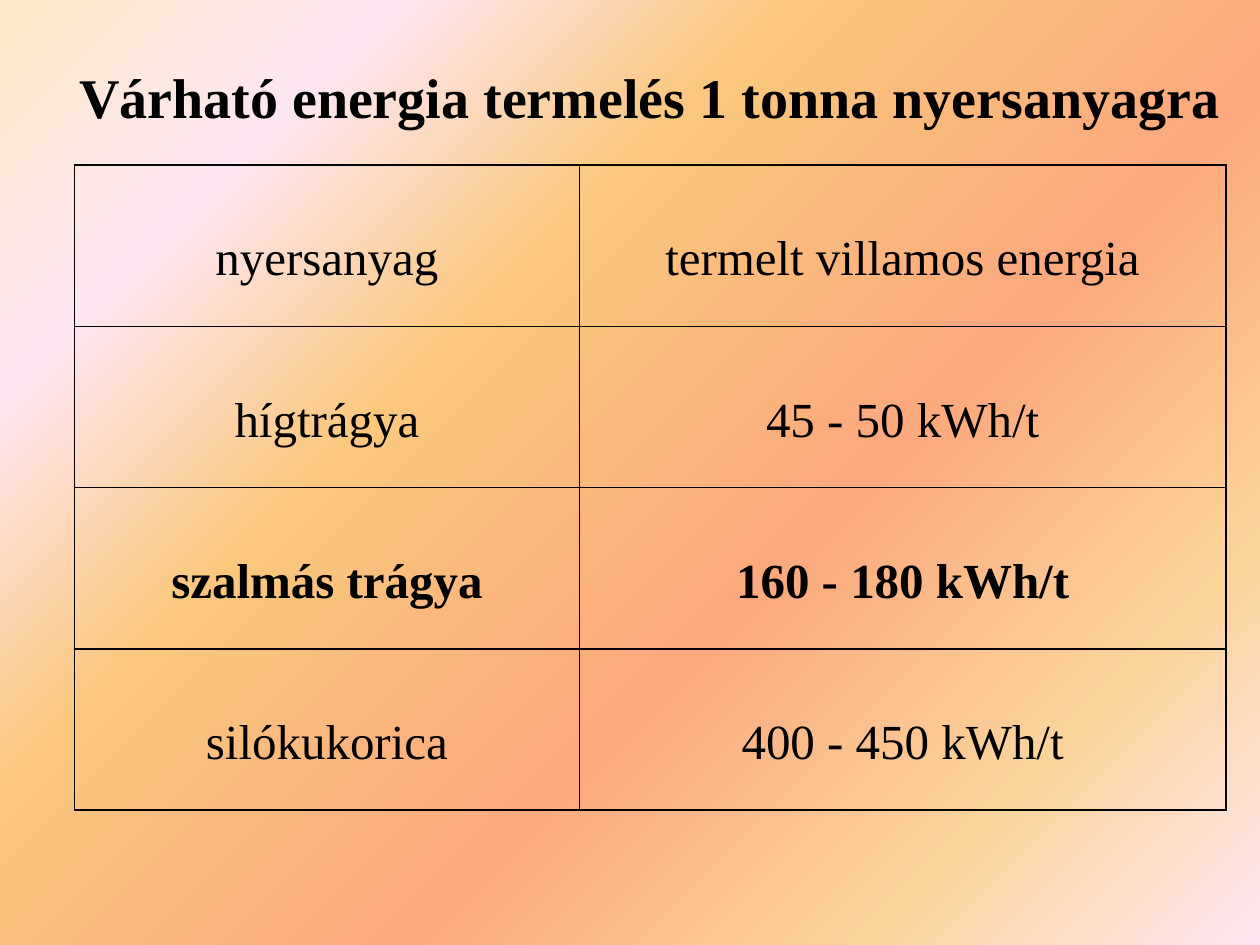
import lxml.etree
import pptx
import pptx.dml.color
import pptx.enum.text
import pptx.oxml.ns
import pptx.util
from pptx.util import Cm

TITLE = "Várható energia termelés 1 tonna nyersanyagra"
# raw material, generated electricity, emphasised
ENERGY_ROWS = [
    ("nyersanyag", "termelt villamos energia", False),
    ("hígtrágya", "45 - 50 kWh/t", False),
    ("szalmás trágya", "160 - 180 kWh/t", True),
    ("silókukorica", "400 - 450 kWh/t", False),
]
COLUMN_WIDTHS = (Cm(10.18), Cm(13.03))
ROW_HEIGHT = Cm(3.25)

THEME = {
    "font": "Times New Roman",
    "ink": "000000",
    "title_size": 32,
    "cell_size": 28,
    "border_width": 1,
    "background": [(0, "FBEAC7"), (18, "FEE7F2"), (36, "FAC77D"),
                   (61, "FBA97D"), (82, "FBD49C"), (100, "FEE7F2")],
}


def add_child(parent, tag, **attributes):
    return lxml.etree.SubElement(parent, pptx.oxml.ns.qn(tag), attributes)


def write_text(frame, text, size, bold=False, line_spacing=None):
    frame.word_wrap = True
    paragraph = frame.paragraphs[0]
    paragraph.alignment = pptx.enum.text.PP_ALIGN.CENTER
    paragraph.line_spacing = line_spacing
    run = paragraph.add_run()
    run.text = text
    run.font.name = THEME["font"]
    run.font.size = pptx.util.Pt(size)
    run.font.bold = bold
    run.font.color.rgb = pptx.dml.color.RGBColor.from_string(THEME["ink"])


def paint_background(slide):
    fill = slide.background.fill
    fill.gradient()
    fill.gradient_angle = 315  # counter-clockwise: runs to the lower right
    stops = slide.element.find(".//" + pptx.oxml.ns.qn("a:gsLst"))
    for default_stop in list(stops):
        stops.remove(default_stop)
    for percent, color in THEME["background"]:
        stop = add_child(stops, "a:gs", pos=str(percent * 1000))
        add_child(stop, "a:srgbClr", val=color)


def outline_cell(cell):
    properties = cell._tc.get_or_add_tcPr()
    width = str(int(pptx.util.Pt(THEME["border_width"])))
    for side in ("a:lnL", "a:lnR", "a:lnT", "a:lnB"):
        line = add_child(properties, side, w=width)
        add_child(add_child(line, "a:solidFill"), "a:srgbClr", val=THEME["ink"])


def add_title(slide):
    title = slide.shapes.add_textbox(Cm(1.3), Cm(0.74), Cm(23.6), Cm(2.41))
    title.text_frame.vertical_anchor = pptx.enum.text.MSO_ANCHOR.MIDDLE
    write_text(title.text_frame, TITLE, THEME["title_size"], bold=True)


def add_energy_table(slide):
    table = slide.shapes.add_table(
        len(ENERGY_ROWS), len(COLUMN_WIDTHS), Cm(1.5), Cm(3.33),
        sum(COLUMN_WIDTHS), ROW_HEIGHT * len(ENERGY_ROWS)).table
    table.first_row = table.horz_banding = False
    for column, width in zip(table.columns, COLUMN_WIDTHS):
        column.width = width
    for row, (material, energy, emphasised) in zip(table.rows, ENERGY_ROWS):
        row.height = ROW_HEIGHT
        for cell, text in zip(row.cells, (material, energy)):
            cell.vertical_anchor = pptx.enum.text.MSO_ANCHOR.MIDDLE
            cell.margin_left = cell.margin_right = Cm(0.18)
            cell.margin_top = cell.margin_bottom = 0
            write_text(cell.text_frame, text, THEME["cell_size"],
                       bold=emphasised, line_spacing=1.5)
            outline_cell(cell)
            cell.fill.background()


def main():
    presentation = pptx.Presentation()
    presentation.slide_width, presentation.slide_height = Cm(25.4), Cm(19.05)
    slide = presentation.slides.add_slide(presentation.slide_layouts[6])
    paint_background(slide)
    add_title(slide)
    add_energy_table(slide)
    presentation.save("out.pptx")


if __name__ == "__main__":
    main()
